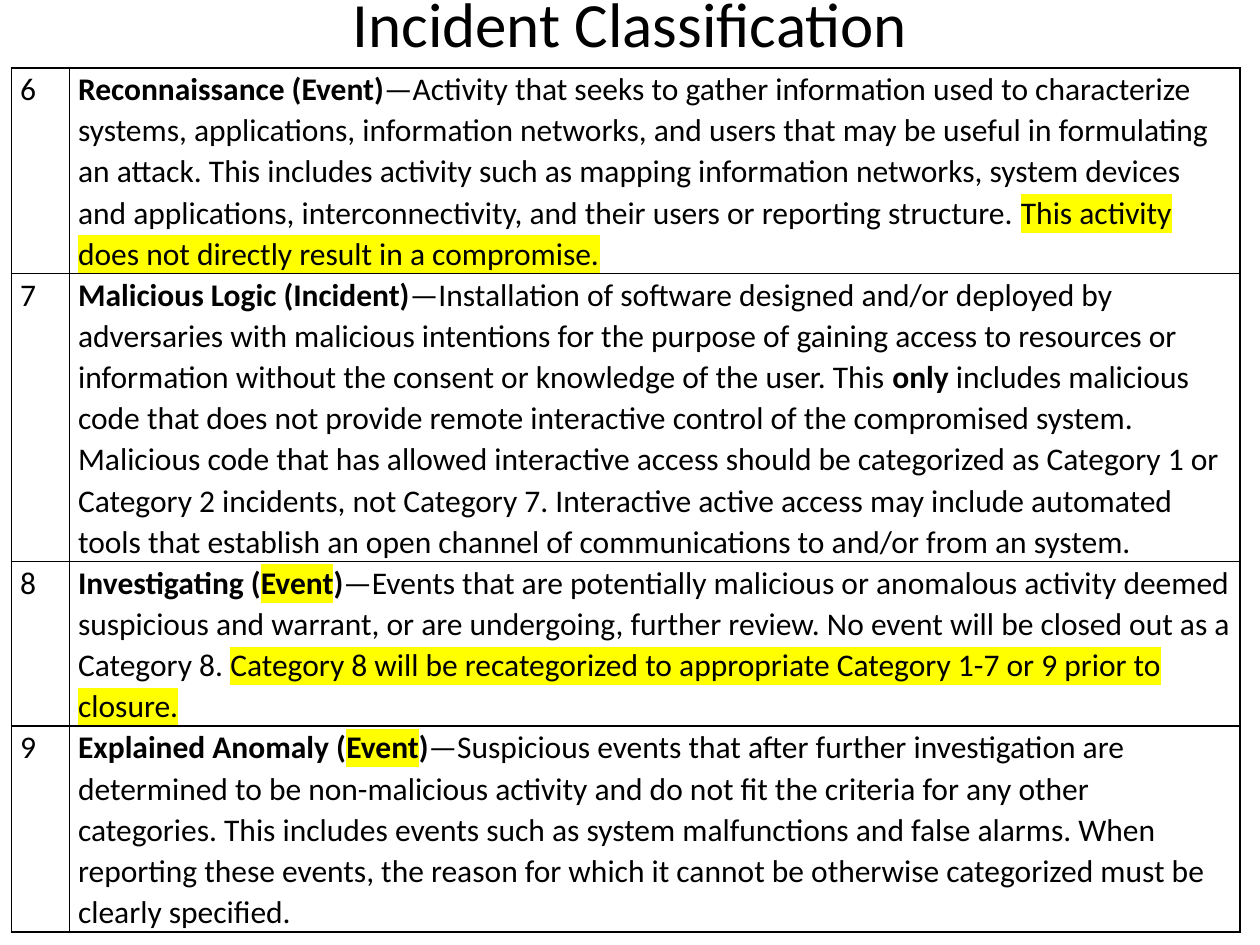
import pptx
import pptx.dml.color
import pptx.enum.text
import pptx.util
from lxml import etree
from pptx.oxml.ns import qn
from pptx.util import Inches

FONT = "Calibri"
BLACK, WHITE, YELLOW = "000000", "FFFFFF", "FFFF00"
LINE_HEIGHT = 0.32

# Each category: number, lines of text, and runs of (text, styles);
# in the styles, "b" is bold and "h" is highlighted.
CATEGORIES = [
    ("6", 5, [
        ("Reconnaissance (Event)", "b"),
        ("—Activity that seeks to gather information used to characterize systems, "
         "applications, information networks, and users that may be useful in formulating "
         "an attack. This includes activity such as mapping information networks, system "
         "devices and applications, interconnectivity, and their users or reporting "
         "structure. ", ""),
        ("This activity does not directly result in a compromise.", "h"),
    ]),
    ("7", 7, [
        ("Malicious Logic (Incident)", "b"),
        ("—Installation of software designed and/or deployed by adversaries with malicious "
         "intentions for the purpose of gaining access to resources or information without "
         "the consent or knowledge of the user. This ", ""),
        ("only ", "b"),
        ("includes malicious code that does not provide remote interactive control of the "
         "compromised system. Malicious code that has allowed interactive access should be "
         "categorized as Category 1 or Category 2 incidents, not Category 7. Interactive "
         "active access may include automated tools that establish an open channel of "
         "communications to and/or from an system.", ""),
    ]),
    ("8", 4, [
        ("Investigating (", "b"),
        ("Event", "bh"),
        (")", "b"),
        ("—Events that are potentially malicious or anomalous activity deemed suspicious "
         "and warrant, or are undergoing, further review. No event will be closed out as a "
         "Category 8. ", ""),
        ("Category 8 will be recategorized to appropriate Category 1-7 or 9 prior to "
         "closure.", "h"),
    ]),
    ("9", 5, [
        ("Explained Anomaly (", "b"),
        ("Event", "bh"),
        (")", "b"),
        ("—Suspicious events that after further investigation are determined to be "
         "non-malicious activity and do not fit the criteria for any other categories. This "
         "includes events such as system malfunctions and false alarms. When reporting "
         "these events, the reason for which it cannot be otherwise categorized must be "
         "clearly specified.", ""),
    ]),
]


def set_values(target, values):
    for name, value in values.items():
        setattr(target, name, value)


def color(hex_string):
    return pptx.dml.color.RGBColor.from_string(hex_string)


def add_color(parent, tag, hex_string):
    """Append an element holding one RGB colour."""
    element = etree.SubElement(parent, qn(tag))
    etree.SubElement(element, qn("a:srgbClr"), val=hex_string)
    return element


def add_run(paragraph, text, size, styles=""):
    run = paragraph.add_run()
    run.text = text
    set_values(run.font, {"name": FONT, "size": pptx.util.Pt(size), "bold": "b" in styles})
    run.font.color.rgb = color(BLACK)
    if "h" in styles:
        properties = run.font._element
        highlight = add_color(properties, "a:highlight", YELLOW)
        properties.find(qn("a:solidFill")).addnext(highlight)


def add_borders(cell):
    """Draw the four borders, which must precede the cell's fill."""
    properties = cell._tc.get_or_add_tcPr()
    for position, tag in enumerate(("a:lnL", "a:lnR", "a:lnT", "a:lnB")):
        line = etree.Element(qn(tag), w=str(pptx.util.Pt(1)))
        add_color(line, "a:solidFill", BLACK)
        properties.insert(position, line)


def fill_cell(cell, runs):
    set_values(cell, {"margin_left": Inches(0.07), "margin_right": Inches(0.07),
                      "margin_top": 0, "margin_bottom": 0})
    cell.fill.solid()
    cell.fill.fore_color.rgb = color(WHITE)
    add_borders(cell)
    paragraph = cell.text_frame.paragraphs[0]
    paragraph.line_spacing = 1.07
    for text, styles in runs:
        add_run(paragraph, text, 18, styles)


def place_title(slide, left, top, width, height):
    title = slide.shapes.title
    set_values(title, {"left": left, "top": top, "width": width, "height": height})
    title.text_frame.vertical_anchor = pptx.enum.text.MSO_ANCHOR.MIDDLE
    paragraph = title.text_frame.paragraphs[0]
    paragraph.alignment = pptx.enum.text.PP_ALIGN.CENTER
    add_run(paragraph, "Incident Classification", 36)


def add_category_table(slide, left, top, width, height):
    table = slide.shapes.add_table(len(CATEGORIES), 2, left, top, width, height).table
    set_values(table, {"first_row": False, "horz_banding": False})
    number_width = Inches(0.46)
    table.columns[0].width = number_width
    table.columns[1].width = width - number_width
    for row, (number, lines, runs) in zip(table.rows, CATEGORIES):
        row.height = Inches(lines * LINE_HEIGHT)
        fill_cell(row.cells[0], [(number, "")])
        fill_cell(row.cells[1], runs)


def main():
    presentation = pptx.Presentation()
    set_values(presentation, {"slide_width": Inches(10), "slide_height": Inches(7.5)})
    title_only = presentation.slide_layouts.get_by_name("Title Only")
    slide = presentation.slides.add_slide(title_only)
    place_title(slide, Inches(0.5), Inches(-0.45), Inches(9), Inches(1.25))
    total_lines = sum(lines for _, lines, _ in CATEGORIES)
    add_category_table(slide, Inches(0.09), Inches(0.54), Inches(9.75),
                       Inches(total_lines * LINE_HEIGHT))
    presentation.save("out.pptx")


if __name__ == "__main__":
    main()
